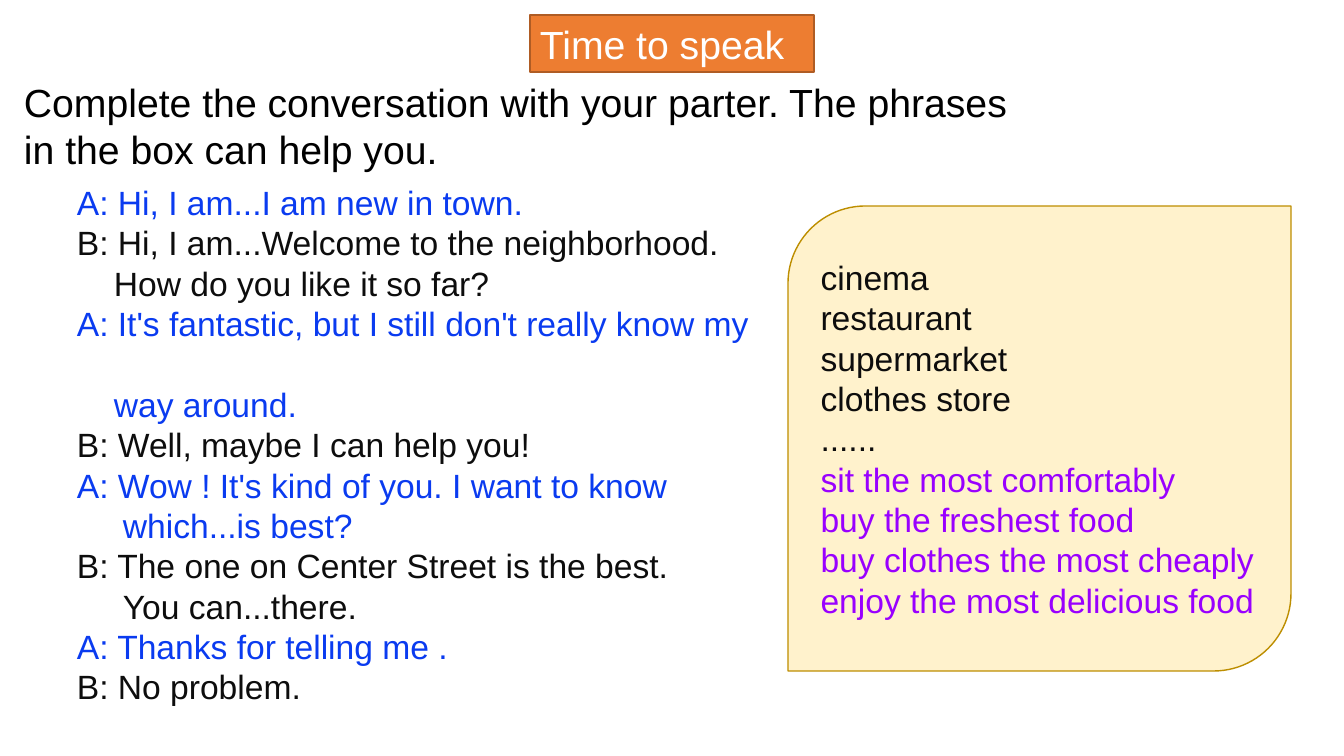
from pptx import Presentation
from pptx.dml.color import RGBColor
from pptx.enum.shapes import MSO_SHAPE as Shape
from pptx.enum.text import MSO_ANCHOR as Anchor, PP_ALIGN as Align
from pptx.util import Pt

# Content
TITLE = "Time to speak"
TASK = "Complete the conversation with your parter. The phrases in the box can help you."
# Each turn: speaker, then (text, indent in px, space before in pt)
DIALOGUE = [
    ("A", [("A: Hi, I am...I am new in town.", 0, 0)]),
    ("B", [("B: Hi, I am...Welcome to the neighborhood.", 0, 0),
           ("How do you like it so far?", 37, 0)]),
    ("A", [("A: It's fantastic, but I still don't really know my", 0, 0),
           ("way around.", 37, 29)]),
    ("B", [("B: Well, maybe I can help you!", 0, 0)]),
    ("A", [("A: Wow ! It's kind of you. I want to know", 0, 0),
           ("which...is best?", 46, 0)]),
    ("B", [("B: The one on Center Street is the best.", 0, 0),
           ("You can...there.", 46, 0)]),
    ("A", [("A: Thanks for telling me .", 0, 0)]),
    ("B", [("B: No problem.", 0, 0)]),
]
PLACES = ["cinema", "restaurant", "supermarket", "clothes store", "......"]
PHRASES = ["sit the most comfortably", "buy the freshest food",
           "buy clothes the most cheaply", "enjoy the most delicious food"]

THEME = {
    "font": "Arial", "heading": 28, "body": 24,
    "white": "FFFFFF", "black": "000000", "ink": "0D0D0D",
    "blue": "0A3BF0", "purple": "9900FF",
    "banner": "ED7D31", "banner_line": "AF5C24",
    "box": "FFF2CC", "box_line": "BD8E00",
}
SPEAKER_COLOR = {"A": "blue", "B": "ink"}

# Positions in px: left, top, width, height
PX = 914400 / 100.8
BANNER = (530, 15, 284, 57)
TASK_BOX = (14, 73, 1037, 105)
PHRASE_BOX = (788, 206, 503, 465)
DIALOGUE_BOX = (67, 177, 719, 499)


def px(length):
    return round(length * PX)


def color(name):
    return RGBColor.from_string(THEME[name])


def write(shape, lines, size, anchor=Anchor.TOP):
    """Fill a shape with lines of (text, color name, indent, space before)."""
    frame = shape.text_frame
    frame.word_wrap = True
    frame.vertical_anchor = anchor
    frame.text = "\n".join(line[0] for line in lines)
    for paragraph, (_, color_name, indent, before) in zip(frame.paragraphs, lines):
        paragraph.alignment = Align.LEFT
        if indent:
            paragraph._p.get_or_add_pPr().set("marL", str(px(indent)))
        if before:
            paragraph.space_before = Pt(before)
        for run in paragraph.runs:
            run.font.name = THEME["font"]
            run.font.size = Pt(THEME[size])
            run.font.color.rgb = color(color_name)


def add_panel(slide, kind, box, fill, line):
    shape = slide.shapes.add_shape(kind, *map(px, box))
    shape.shadow.inherit = False
    shape.fill.solid()
    shape.fill.fore_color.rgb = color(fill)
    shape.line.color.rgb = color(line)
    shape.line.width = Pt(1)
    return shape


presentation = Presentation()
presentation.slide_width, presentation.slide_height = px(1344), px(756)
slide = presentation.slides.add_slide(presentation.slide_layouts[6])

# Banner and task
banner = add_panel(slide, Shape.RECTANGLE, BANNER, "banner", "banner_line")
write(banner, [(TITLE, "white", 0, 0)], "heading")
task = slide.shapes.add_textbox(*map(px, TASK_BOX))
write(task, [(TASK, "black", 0, 0)], "heading")

# Phrase box
phrase_box = add_panel(slide, Shape.ROUND_2_DIAG_RECTANGLE, PHRASE_BOX, "box", "box_line")
write(phrase_box,
      [(text, "ink", 0, 0) for text in PLACES]
      + [(text, "purple", 0, 0) for text in PHRASES],
      "body", Anchor.MIDDLE)

# Dialogue
dialogue = slide.shapes.add_textbox(*map(px, DIALOGUE_BOX))
write(dialogue,
      [(text, SPEAKER_COLOR[speaker], indent, before)
       for speaker, turn in DIALOGUE for text, indent, before in turn],
      "body")

presentation.save("out.pptx")
